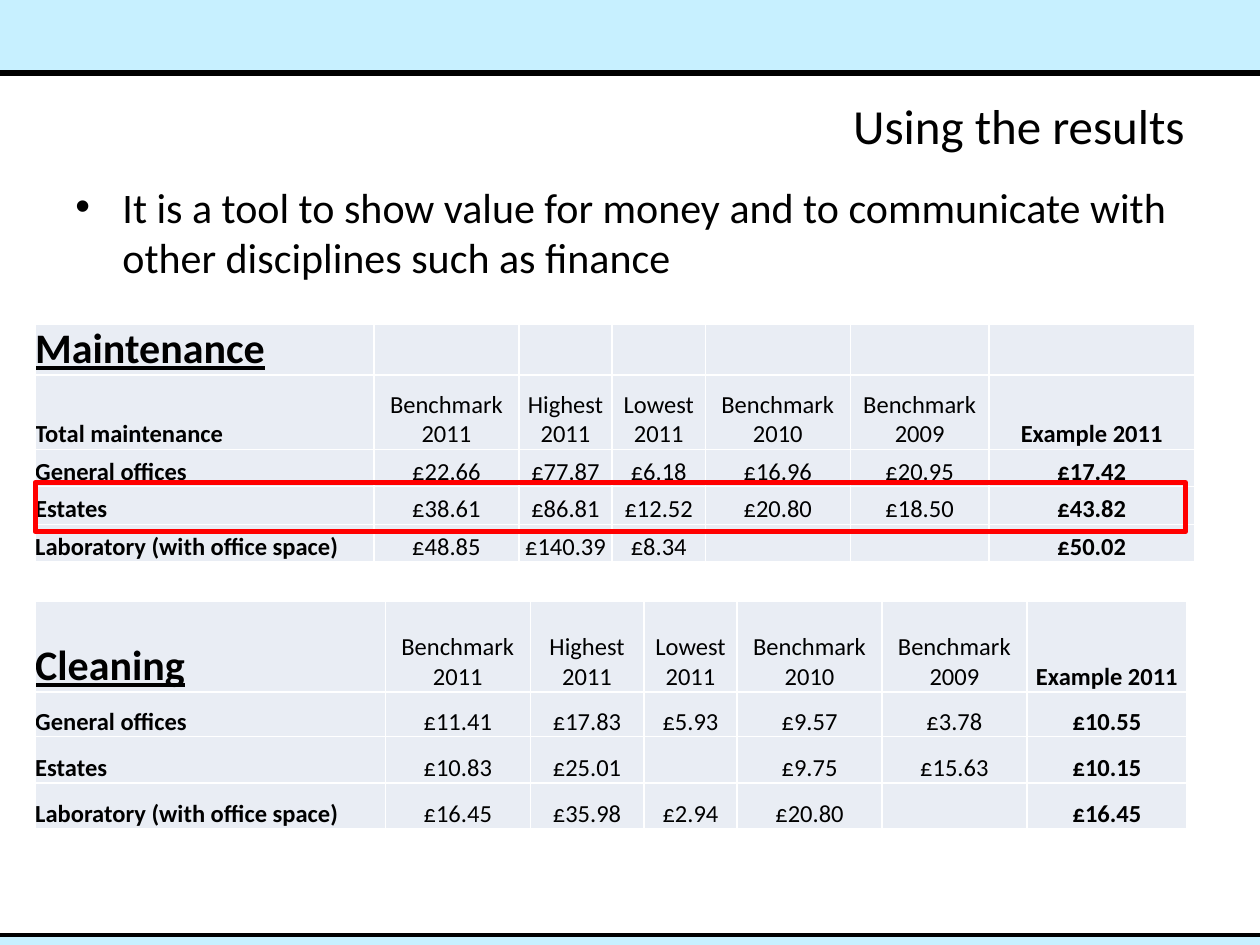
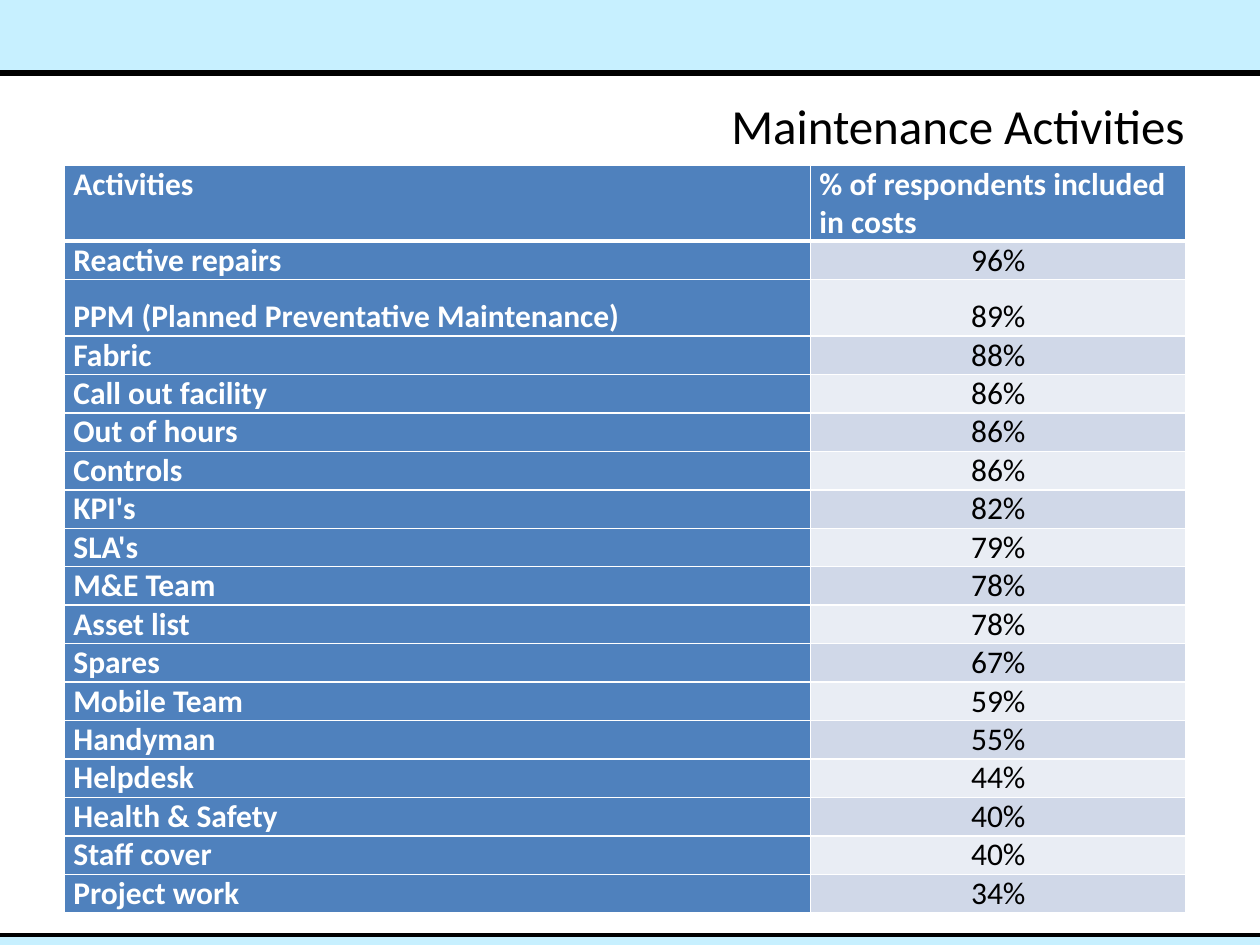
from lxml.etree import SubElement
from pptx import Presentation
from pptx.dml.color import RGBColor
from pptx.enum.shapes import MSO_CONNECTOR, MSO_SHAPE
from pptx.enum.text import MSO_ANCHOR, PP_ALIGN
from pptx.oxml.ns import qn
from pptx.util import Cm, Pt

FONT = "Calibri"
BLACK, WHITE, RED = "000000", "FFFFFF", "FF0000"
SKY, BLUE, BAND, PALE = "C7F0FF", "4F81BD", "D0D8E8", "E9EDF4"
PAGE_WIDTH, PAGE_HEIGHT = 25.4, 19.05

MAINTENANCE = [
    ["Maintenance", "", "", "", "", "", ""],
    ["Total maintenance", "Benchmark 2011", "Highest 2011", "Lowest 2011",
     "Benchmark 2010", "Benchmark 2009", "Example 2011"],
    ["General offices", "£22.66", "£77.87", "£6.18", "£16.96", "£20.95", "£17.42"],
    ["Estates", "£38.61", "£86.81", "£12.52", "£20.80", "£18.50", "£43.82"],
    ["Laboratory (with office space)", "£48.85", "£140.39", "£8.34", "", "", "£50.02"],
]
CLEANING = [
    ["Cleaning", *MAINTENANCE[1][1:]],
    ["General offices", "£11.41", "£17.83", "£5.93", "£9.57", "£3.78", "£10.55"],
    ["Estates", "£10.83", "£25.01", "", "£9.75", "£15.63", "£10.15"],
    ["Laboratory (with office space)", "£16.45", "£35.98", "£2.94", "£20.80", "", "£16.45"],
]
ACTIVITIES = [
    ("Reactive repairs", "96%"), ("PPM (Planned Preventative Maintenance)", "89%"),
    ("Fabric", "88%"), ("Call out facility", "86%"), ("Out of hours", "86%"),
    ("Controls", "86%"), ("KPI's", "82%"), ("SLA's", "79%"), ("M&E Team", "78%"),
    ("Asset list", "78%"), ("Spares", "67%"), ("Mobile Team", "59%"),
    ("Handyman", "55%"), ("Helpdesk", "44%"), ("Health & Safety", "40%"),
    ("Staff cover", "40%"), ("Project work", "34%"),
]


def rgb(color):
    return RGBColor.from_string(color)


def add_run(paragraph, text, size, color=BLACK, bold=False, underline=False):
    run = paragraph.add_run()
    run.text = text
    font = run.font
    font.name, font.size, font.bold, font.underline = FONT, Pt(size), bold, underline
    font.color.rgb = rgb(color)


def add_rectangle(slide, box, fill=None, line=None, line_width=1):
    rectangle = slide.shapes.add_shape(MSO_SHAPE.RECTANGLE, *map(Cm, box))
    rectangle.shadow.inherit = False
    if fill:
        rectangle.fill.solid()
        rectangle.fill.fore_color.rgb = rgb(fill)
    else:
        rectangle.fill.background()
    if line:
        rectangle.line.color.rgb = rgb(line)
        rectangle.line.width = Pt(line_width)
    else:
        rectangle.line.fill.background()


def add_rule(slide, top, width):
    rule = slide.shapes.add_connector(
        MSO_CONNECTOR.STRAIGHT, 0, Cm(top), Cm(PAGE_WIDTH), Cm(top))
    rule.line.color.rgb = rgb(BLACK)
    rule.line.width = Pt(width)
    SubElement(rule._element.spPr, qn("a:effectLst"))


def add_text_frame(slide, box, anchor):
    frame = slide.shapes.add_textbox(*map(Cm, box)).text_frame
    frame.word_wrap = True
    frame.vertical_anchor = anchor
    return frame


def add_page(prs, title):
    """Blank slide with the shared bands, rules and title."""
    slide = prs.slides.add_slide(prs.slide_layouts[6])
    header, footer = 1.47, 18.85
    add_rectangle(slide, (0, 0, PAGE_WIDTH, header), SKY)
    add_rule(slide, header, 3)
    add_rectangle(slide, (0, footer, PAGE_WIDTH, PAGE_HEIGHT - footer), SKY)
    add_rule(slide, footer, 2)
    heading = add_text_frame(slide, (1.27, 1.7, 22.86, 1.63), MSO_ANCHOR.MIDDLE).paragraphs[0]
    heading.alignment = PP_ALIGN.RIGHT
    add_run(heading, title, 28)
    return slide


def add_bullet(slide, box, text):
    point = add_text_frame(slide, box, MSO_ANCHOR.TOP).paragraphs[0]
    point.space_before = Pt(2)
    properties = point._p.get_or_add_pPr()
    indent = Cm(0.95)
    properties.set("marL", str(indent))
    properties.set("indent", str(-indent))
    SubElement(properties, qn("a:buFont"), typeface="Arial")
    SubElement(properties, qn("a:buChar"), char="•")
    add_run(point, text, 24)


def add_grid(slide, left, top, widths, heights):
    table = slide.shapes.add_table(
        len(heights), len(widths), Cm(left), Cm(top),
        Cm(sum(widths)), Cm(sum(heights))).table
    table.first_row = table.horz_banding = False
    for column, width in zip(table.columns, widths):
        column.width = Cm(width)
    for row, height in zip(table.rows, heights):
        row.height = Cm(height)
    return table


def style_cell(cell, fill, side_margin=0, bottom_border=1, top_border=1):
    properties = cell._tc.get_or_add_tcPr()
    borders = {"lnL": 1, "lnR": 1, "lnT": top_border, "lnB": bottom_border}
    for side, width in borders.items():
        border = SubElement(properties, qn(f"a:{side}"), w=str(Pt(width)))
        SubElement(SubElement(border, qn("a:solidFill")), qn("a:srgbClr"), val=WHITE)
    cell.fill.solid()
    cell.fill.fore_color.rgb = rgb(fill)
    cell.margin_left = cell.margin_right = Cm(side_margin)
    cell.margin_top = cell.margin_bottom = 0
    cell.vertical_anchor = MSO_ANCHOR.BOTTOM


def add_cost_table(slide, left, top, widths, heights, costs):
    """Costs per premises type; the first cell is the heading."""
    table = add_grid(slide, left, top, widths, heights)
    last = len(widths) - 1
    for r, row in enumerate(costs):
        for c, text in enumerate(row):
            cell = table.cell(r, c)
            style_cell(cell, PALE)
            if not text:
                continue
            paragraph = cell.text_frame.paragraphs[0]
            if c:
                paragraph.alignment = PP_ALIGN.CENTER
            is_heading = r == c == 0
            add_run(paragraph, text, 24 if is_heading else 14,
                    bold=c in (0, last), underline=is_heading)


def add_activity_table(slide, left, top, widths, activities):
    """Activities with a blue header row and a blue first column."""
    header, tall, regular = 1.53, 1.14, 0.775
    heights = [header] + [tall if name.startswith("PPM") else regular
                          for name, _ in activities]
    table = add_grid(slide, left, top, widths, heights)
    rows = [("Activities", "% of respondents included in costs"), *activities]
    for r, row in enumerate(rows):
        for c, text in enumerate(row):
            cell = table.cell(r, c)
            is_share = r > 0 and c == 1
            fill = (BAND if r % 2 else PALE) if is_share else BLUE
            style_cell(cell, fill, 0.18, bottom_border=1 if r else 3,
                       top_border=3 if r == 1 else 1)
            if r == 0:
                cell.vertical_anchor = MSO_ANCHOR.TOP
            paragraph = cell.text_frame.paragraphs[0]
            if is_share:
                paragraph.alignment = PP_ALIGN.CENTER
            add_run(paragraph, text, 18, BLACK if is_share else WHITE, bold=not is_share)


def build_results(prs):
    slide = add_page(prs, "Using the results")
    add_bullet(slide, (1.27, 3.53, 22.86, 2.6),
               "It is a tool to show value for money and to communicate with "
               "other disciplines such as finance")
    left = 0.71
    add_cost_table(slide, left, 6.53, [6.83, 2.92, 1.88, 1.88, 2.92, 2.8, 4.14],
                   [1.03, 1.5, 0.75, 0.76, 0.76], MAINTENANCE)
    add_cost_table(slide, left, 12.12, [7.06, 2.92, 2.29, 1.88, 2.92, 2.92, 3.23],
                   [1.83, 0.9, 0.93, 0.93], CLEANING)
    # Highlight around the Estates row
    add_rectangle(slide, (left, 9.73, 23.19, 0.99), line=RED, line_width=3)


def build_activities(prs):
    slide = add_page(prs, "Maintenance Activities")
    add_activity_table(slide, 1.3, 3.33, [15.04, 7.57], ACTIVITIES)


def main():
    prs = Presentation()
    prs.slide_width, prs.slide_height = Cm(PAGE_WIDTH), Cm(PAGE_HEIGHT)
    build_results(prs)
    build_activities(prs)
    prs.save("out.pptx")


if __name__ == "__main__":
    main()
